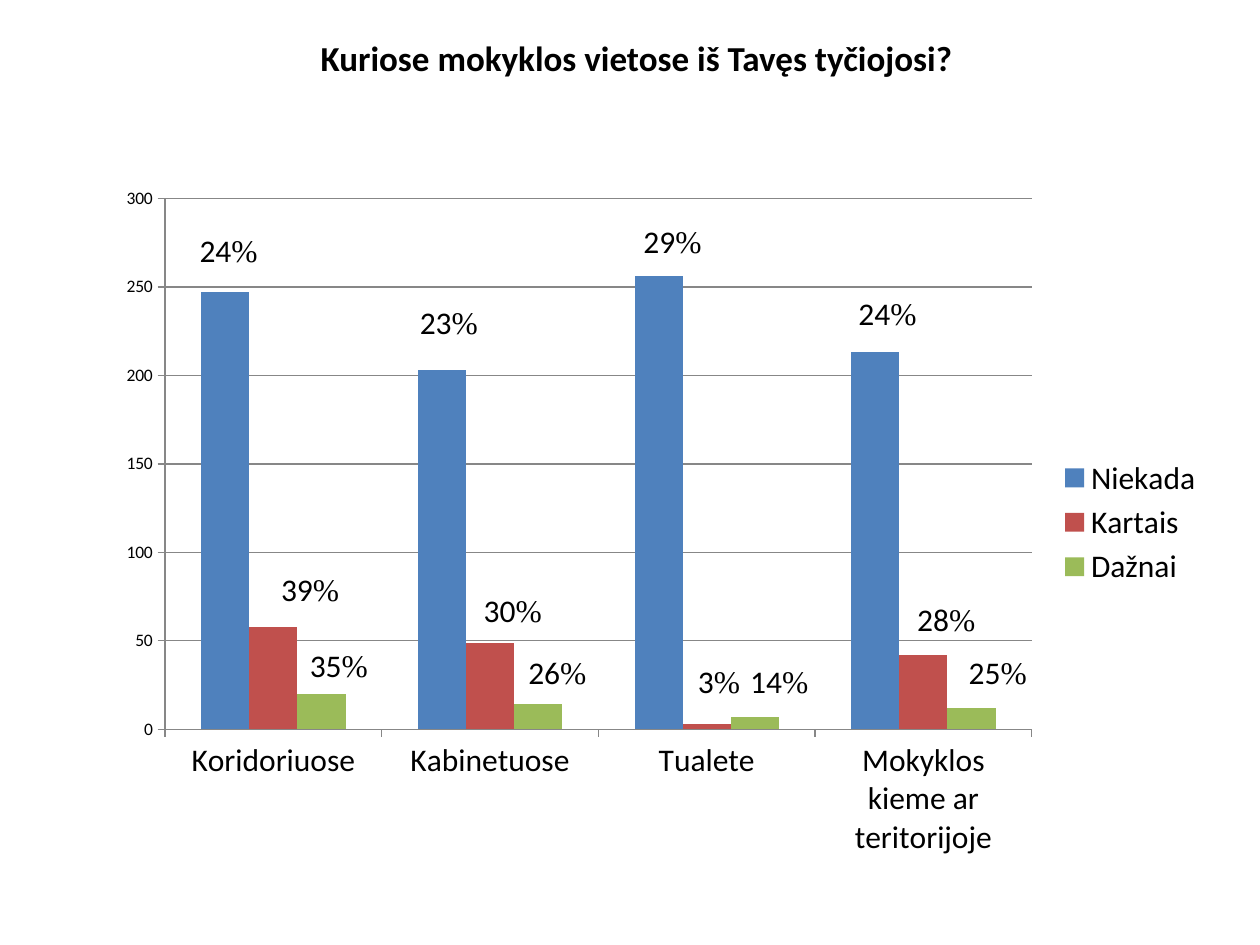
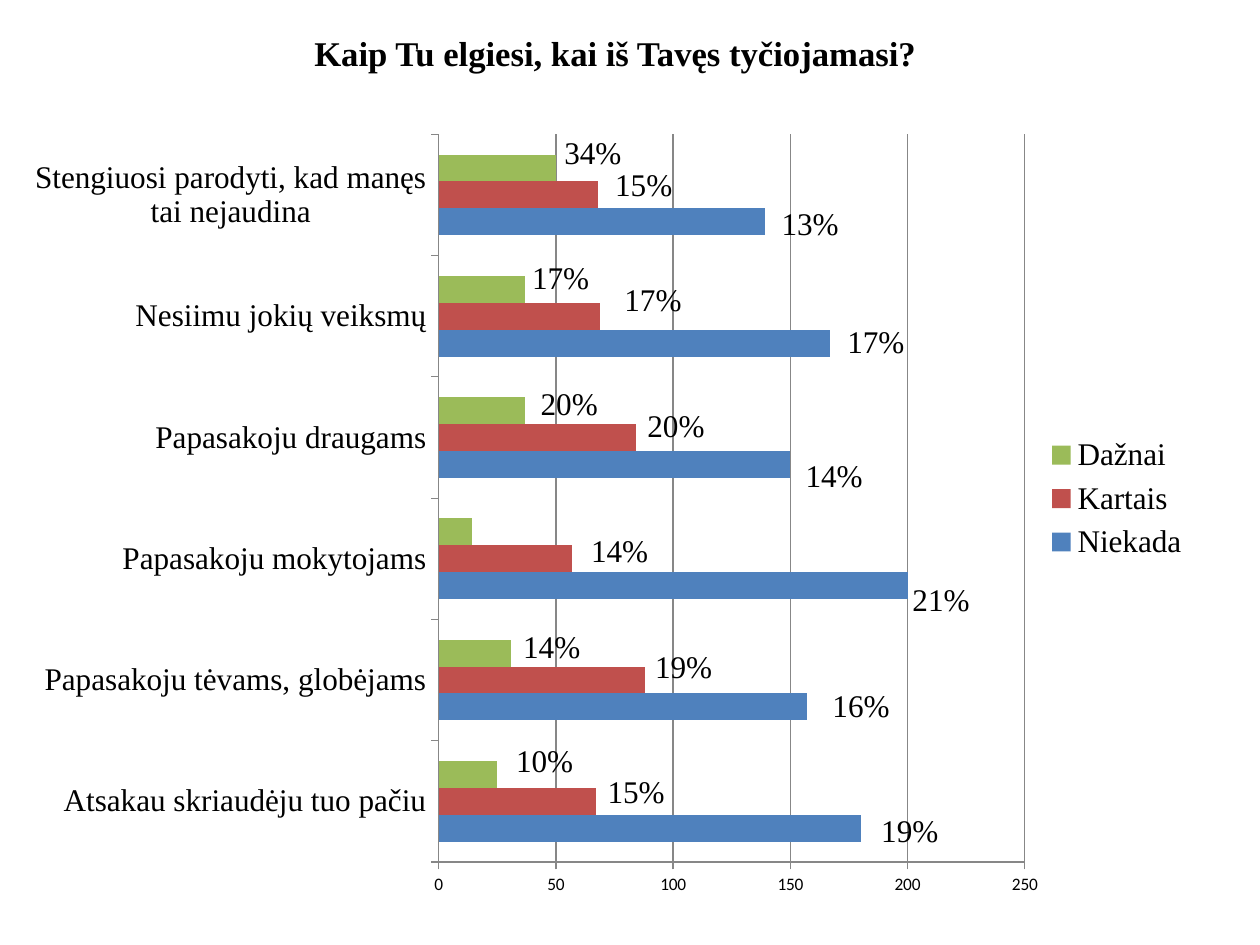
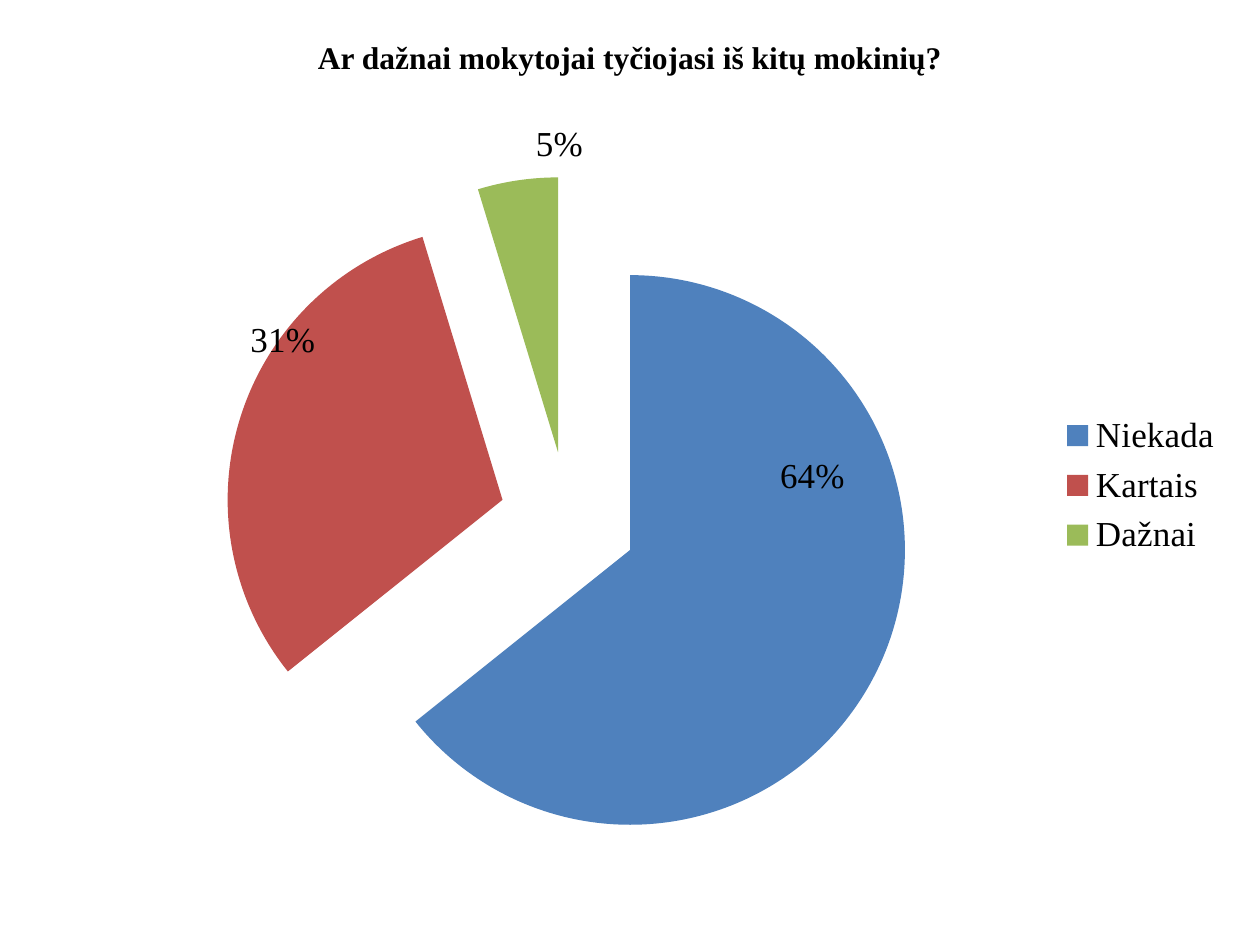
import pptx
import pptx.util
import pptx.dml.color
import pptx.chart.data
import pptx.enum.chart
import pptx.enum.text
import pptx.oxml
import pptx.oxml.ns

Pt = pptx.util.Pt
XL = pptx.enum.chart.XL_CHART_TYPE
POS = pptx.enum.chart.XL_LABEL_POSITION
BLUE, RED, GREEN, BLACK, GRAY = "4F81BD", "C0504D", "9BBB59", "000000", "878787"
COLORS = [BLUE, RED, GREEN]
ANSWERS = ["Niekada", "Kartais", "Dažnai"]
SERIF = "Times New Roman"


def style(f, color=BLACK, **formats):
    for key, value in formats.items():
        setattr(f, key, value)
    f.color.rgb = pptx.dml.color.RGBColor.from_string(color)


def layout(**values):
    body = "".join(f'<c:{key} val="{value}"/>' for key, value in values.items())
    return pptx.oxml.parse_xml(
        f'<c:layout {pptx.oxml.ns.nsdecls("c")}><c:manualLayout>{body}</c:manualLayout></c:layout>')


slides = [
    dict(title="Kuriose mokyklos vietose iš Tavęs tyčiojosi? ",
         title_box=(60, 15, 612, 57), title_size=20, font="Calibri",
         kind=XL.COLUMN_CLUSTERED, box=(60, 100, 635, 397), size=18,
         plot=(0.054, 0.034, 0.78, 0.764), legend=None, position=POS.OUTSIDE_END,
         cats=["Koridoriuose", "Kabinetuose", "Tualete", "Mokyklos kieme ar teritorijoje"],
         series=[("Niekada", [247, 203, 256, 213]),
                 ("Kartais", [58, 49, 3, 42]),
                 ("Dažnai", [20, 14, 7, 12])],
         labels=[["24%", "23%", "29%", "24%"],
                 ["39%", "30%", "3%", "28%"],
                 ["35%", "26%", "14%", "25%"]],
         shifts=[[(2, -10), (4, -13), (8, -6), (7, -8)],
                 [(21, -7), (13, -4), (7, -10), (13, -6)],
                 [(10, -2), (11, -4), (14, -6), (15, -6)]]),
    dict(title="Kaip Tu elgiesi, kai iš Tavęs tyčiojamasi? ",
         title_box=(48, 21, 612, 40), title_size=19.8, font=SERIF,
         kind=XL.BAR_CLUSTERED, box=(20, 60, 663.5, 453.5), size=18,
         plot=(0.341, 0.037, 0.51, 0.917), legend=(0.866, 0.408, 0.13, 0.176),
         position=POS.OUTSIDE_END,
         cats=["Atsakau skriaudėju tuo pačiu", "Papasakoju tėvams, globėjams",
               "Papasakoju mokytojams", "Papasakoju draugams", "Nesiimu jokių veiksmų",
               "Stengiuosi parodyti, kad manęs tai nejaudina"],
         series=[("Niekada", [180, 157, 200, 150, 167, 139]),
                 ("Kartais", [67, 88, 57, 84, 69, 68]),
                 ("Dažnai", [25, 31, 14, 37, 37, 50])],
         labels=[["19%", "16%", "21%", "14%", "17%", "13%"],
                 ["15%", "19%", "14%", "20%", "17%", "15%"],
                 ["10%", "14%", "", "20%", "17%", "34%"]],
         shifts=[[(9, 2), (12, 0), (0, 9), (6, 7), (7, 0), (7, 2)],
                 [(4, -5), (3, -7), (8, -4), (4, -6), (11, -9), (7, -5)],
                 [(8, -7), (4, -3), (0, 0), (6, -3), (1, -6), (2, -8)]]),
    dict(title="Ar dažnai mokytojai tyčiojasi iš kitų mokinių?",
         title_box=(54, 21, 612, 45), title_size=18, font=SERIF,
         kind=XL.PIE, box=(48.25, 60.25, 657.5, 447.75), size=20,
         plot=(0.018, 0.091, 0.805, 0.877), legend=(0.843, 0.383, 0.15, 0.204),
         position=POS.CENTER,
         cats=ANSWERS, series=[("Series 1", [437, 211, 32])],
         labels=[[" 64%", " 31%", "5%"]],
         shifts=[[(31, -76), (-53, -68), (12.5, -98)]]),
]

prs = pptx.Presentation()
prs.slide_width, prs.slide_height = Pt(720), Pt(540)

for d in slides:
    s = prs.slides.add_slide(prs.slide_layouts[6])
    tf = s.shapes.add_textbox(*map(Pt, d["title_box"])).text_frame
    tf.word_wrap = True
    tf.vertical_anchor = pptx.enum.text.MSO_ANCHOR.MIDDLE
    p = tf.paragraphs[0]
    p.alignment = pptx.enum.text.PP_ALIGN.CENTER
    r = p.add_run()
    r.text = d["title"]
    style(r.font, size=Pt(d["title_size"]), name=d["font"], bold=True)
    p.add_line_break()

    data = pptx.chart.data.CategoryChartData()
    data.categories = d["cats"]
    for name, values in d["series"]:
        data.add_series(name, values)
    chart = s.shapes.add_chart(d["kind"], *map(Pt, d["box"]), data).chart
    text = dict(size=Pt(d["size"]), name=d["font"])
    style(chart.font, size=Pt(10), name="Calibri")
    chart.has_title = False
    chart.has_legend = True
    chart.legend.position = pptx.enum.chart.XL_LEGEND_POSITION.RIGHT
    chart.legend.include_in_layout = False
    style(chart.legend.font, **text)
    if d["legend"]:
        x, y, w, h = d["legend"]
        for old in chart.legend._element.findall(pptx.oxml.ns.qn("c:layout")):
            chart.legend._element.remove(old)
        chart.legend._element.find(pptx.oxml.ns.qn("c:legendPos")).addnext(
            layout(xMode="edge", yMode="edge", x=x, y=y, w=w, h=h))

    plot = chart.plots[0]
    area = plot._element.getparent()
    for old in area.findall(pptx.oxml.ns.qn("c:layout")):
        area.remove(old)
    x, y, w, h = d["plot"]
    area.insert(0, layout(layoutTarget="inner", xMode="edge", yMode="edge", x=x, y=y, w=w, h=h))

    is_pie = d["kind"] == XL.PIE
    plot.vary_by_categories = is_pie
    if is_pie:
        ser = plot.series[0]._element
        ser.find(pptx.oxml.ns.qn("c:tx")).addnext(
            pptx.oxml.parse_xml(f'<c:explosion {pptx.oxml.ns.nsdecls("c")} val="25"/>'))
        fills = [plot.series[0].points[i].format.fill for i in range(len(COLORS))]
    else:
        plot.gap_width = 150
        fills = [series.format.fill for series in plot.series]
        style(chart.category_axis.tick_labels.font, **text)
        style(chart.value_axis.tick_labels.font, size=Pt(10), name="Calibri")
        chart.value_axis.has_major_gridlines = True
        for part in (chart.category_axis, chart.value_axis, chart.value_axis.major_gridlines):
            style(part.format.line, GRAY, width=Pt(0.75))
    for fill, color in zip(fills, COLORS):
        fill.solid()
        fill.fore_color.rgb = pptx.dml.color.RGBColor.from_string(color)

    for series, labels, shifts in zip(plot.series, d["labels"], d["shifts"]):
        series.data_labels.show_value = True
        series.data_labels.show_percentage = is_pie
        style(series.data_labels.font, **text)
        for i, (label, (dx, dy)) in enumerate(zip(labels, shifts)):
            dl = series.points[i].data_label
            dl.position = d["position"]
            idx = series._element.xpath(f'c:dLbls/c:dLbl/c:idx[@val="{i}"]')[0]
            if not label:
                for extra in list(idx.itersiblings()):
                    idx.getparent().remove(extra)
                idx.addnext(pptx.oxml.parse_xml(f'<c:delete {pptx.oxml.ns.nsdecls("c")} val="1"/>'))
                continue
            p = dl.text_frame.paragraphs[0]
            for piece, font in ((label[:-1], d["font"]), (label[-1], SERIF)):
                r = p.add_run()
                r.text = piece
                style(r.font, size=Pt(d["size"]), name=font)
            idx.addnext(layout(x=round(dx / d["box"][2], 4), y=round(dy / d["box"][3], 4)))
        for lines in series._element.xpath("c:dLbls/c:showLeaderLines"):
            lines.set("val", "0")

prs.save("out.pptx")
